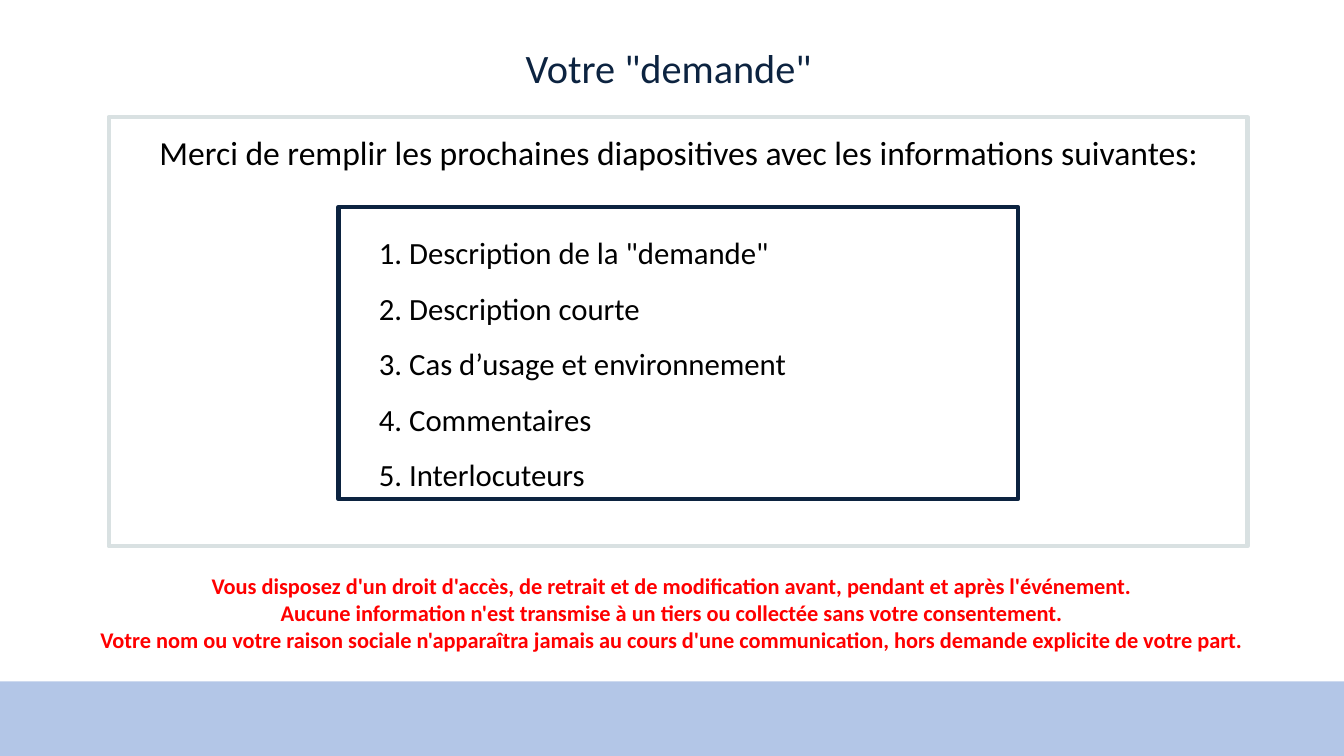
"""Build the slide that lists the information to fill in for a request."""
from lxml import etree
from pptx import Presentation
from pptx.dml.color import RGBColor
from pptx.enum.shapes import MSO_SHAPE as SHAPE
from pptx.enum.text import MSO_ANCHOR as ANCHOR, PP_ALIGN as ALIGN
from pptx.oxml.ns import qn
from pptx.util import Cm, Pt

NAVY = RGBColor(0x0C, 0x23, 0x40)
GREY = RGBColor(0xD9, 0xE1, 0xE2)
BLUE = RGBColor(0x8F, 0xAA, 0xDC)
BLACK = RGBColor(0, 0, 0)
RED = RGBColor(0xFF, 0, 0)


def add_rect(box, fill=None, line=None):
    sp = s.shapes.add_shape(SHAPE.RECTANGLE, *[Cm(v) for v in box])
    sp.shadow.inherit = False
    if fill is None:
        sp.fill.background()
    else:
        sp.fill.solid()
        sp.fill.fore_color.rgb = fill
    if line is None:
        sp.line.fill.background()
    else:
        sp.line.color.rgb = line
        sp.line.width = Pt(3)
    return sp


def add_lines(tf, lines, size, color, bold=False, align=ALIGN.CENTER, spacing=1.0):
    tf.word_wrap = True
    for i, line in enumerate(lines):
        p = tf.add_paragraph() if i else tf.paragraphs[0]
        p.alignment = align
        p.line_spacing = spacing
        r = p.add_run()
        r.text = line
        r.font.name = "Calibri"
        r.font.size = Pt(size)
        r.font.bold = bold
        r.font.color.rgb = color


prs = Presentation()
prs.slide_width, prs.slide_height = Cm(33.87), Cm(19.05)
s = prs.slides.add_slide(prs.slide_layouts[5])

band = add_rect((0, 17.17, 33.87, 1.88), fill=BLUE)
band_color = band.fill._xPr.find(qn("a:solidFill"))[0]
etree.SubElement(band_color, qn("a:alpha"), val="67000")

title = s.shapes.title
title.left, title.top, title.width, title.height = Cm(-0.08), Cm(1.04), Cm(33.87), Cm(1.47)
title.text_frame.vertical_anchor = ANCHOR.MIDDLE
add_lines(title.text_frame, ['Votre "demande"'], 28.8, NAVY, spacing=0.9)

add_rect((2.74, 2.95, 28.7, 10.82), line=GREY)

topics = ['Description de la "demande"', "Description courte",
          "Cas d’usage et environnement", "Commentaires", "Interlocuteurs"]
sp = s.shapes.add_textbox(Cm(8.03), Cm(5.31), Cm(17.83), Cm(7.24))
add_lines(sp.text_frame, [f"{n}. {topic}" for n, topic in enumerate(topics, 1)],
          22, BLACK, align=ALIGN.LEFT, spacing=1.5)
for p in sp.text_frame.paragraphs:
    p.level = 1
    p._p.get_or_add_pPr().set("marL", str(Cm(1.27)))

add_rect((8.53, 5.21, 17.12, 7.37), line=NAVY)

sp = s.shapes.add_textbox(Cm(3.3), Cm(3.2), Cm(27.61), Cm(1.27))
add_lines(sp.text_frame, [
    "Merci de remplir les prochaines diapositives avec les informations suivantes:",
], 24, BLACK)

sp = s.shapes.add_textbox(Cm(0.05), Cm(14.3), Cm(33.76), Cm(2.41))
add_lines(sp.text_frame, [
    "Vous disposez d'un droit d'accès, de retrait et de modification avant, pendant et après l'événement.",
    "Aucune information n'est transmise à un tiers ou collectée sans votre consentement.",
    "Votre nom ou votre raison sociale n'apparaîtra jamais au cours d'une communication, "
    "hors demande explicite de votre part.",
], 16, RED, bold=True)

prs.save("out.pptx")
